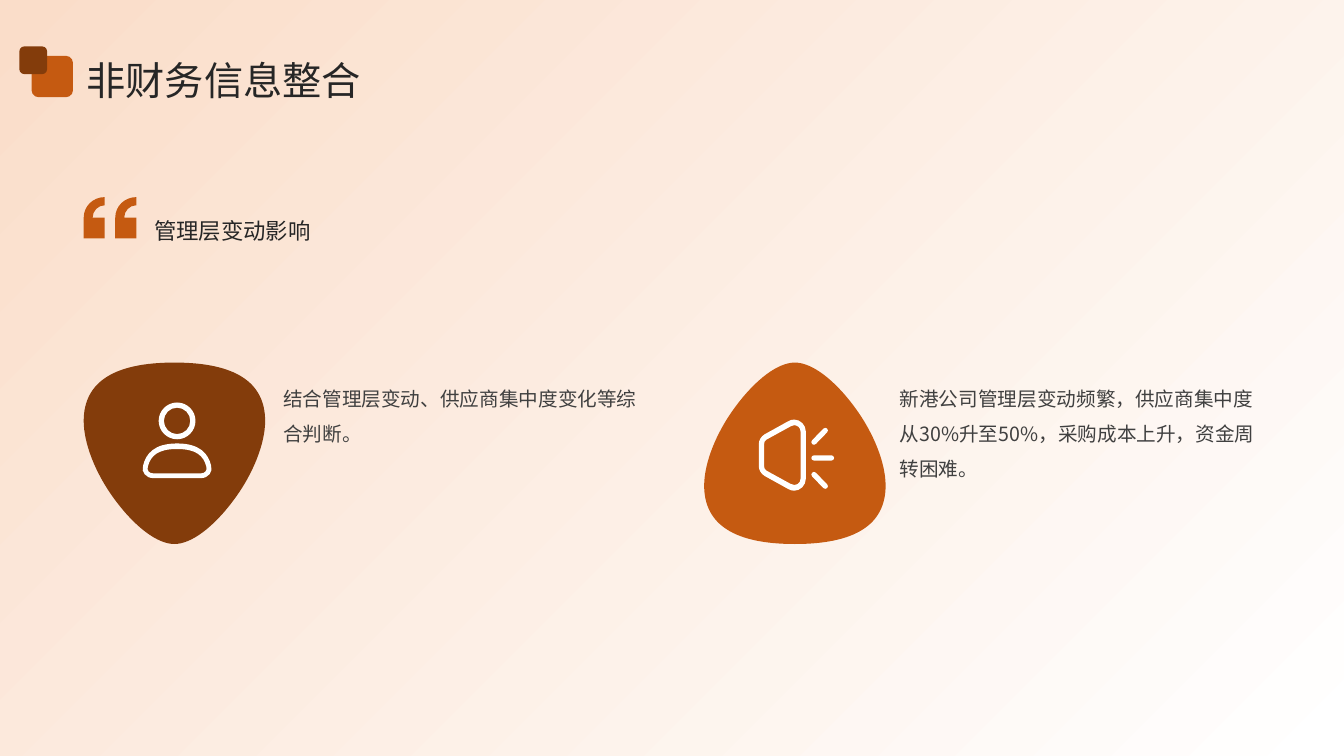
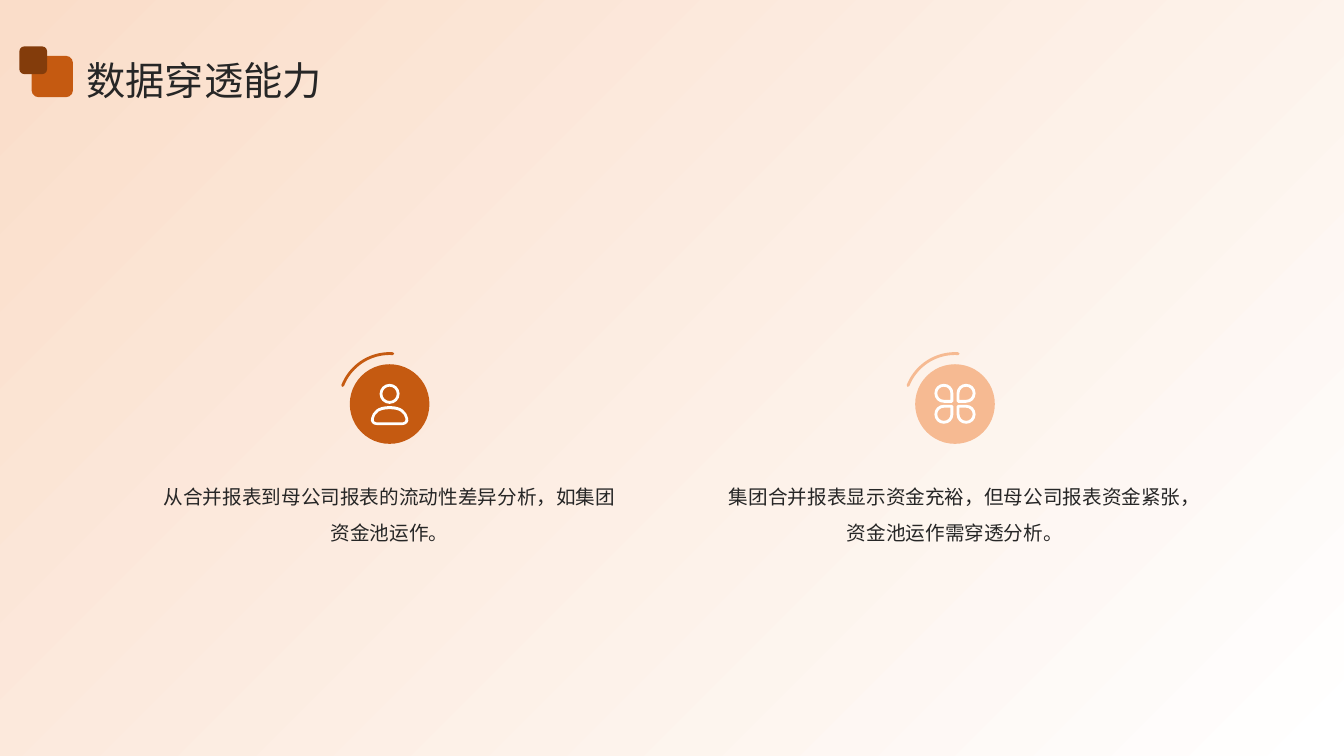
from dataclasses import dataclass
from math import hypot

from pptx import Presentation
from pptx.dml.color import RGBColor
from pptx.enum.shapes import MSO_SHAPE
from pptx.enum.text import MSO_ANCHOR, PP_ALIGN
from pptx.oxml.ns import qn
from pptx.util import Pt


@dataclass(frozen=True)
class Theme:
    font: str = "Noto Sans CJK SC"
    white: str = "FFFFFF"
    peach: str = "FADDC9"
    apricot: str = "F6BA92"
    orange: str = "C55A11"
    brown: str = "833C0B"
    ink: str = "262626"
    grey: str = "404040"
    title: int = 28
    subtitle: int = 16
    body: int = 14


T = Theme()
W, H = 960, 540


def circle(cx, cy, r):
    k = 0.55 * r
    return [(cx, cy - r), (cx + k, cy - r, cx + r, cy - k, cx + r, cy),
            (cx + r, cy + k, cx + k, cy + r, cx, cy + r),
            (cx - k, cy + r, cx - r, cy + k, cx - r, cy),
            (cx - r, cy - k, cx - k, cy - r, cx, cy - r)]


def capsule(x1, y1, x2, y2, r=3.5):
    """Outline of a round-ended bar between two points."""
    length = hypot(x2 - x1, y2 - y1)
    ux, uy = (x2 - x1) / length * r, (y2 - y1) / length * r

    def at(x, y, along, across):
        return x + along * ux - across * uy, y + along * uy + across * ux

    def cap(x, y, d):
        k = 0.55
        return [at(x, y, k * d, -d) + at(x, y, d, -k * d) + at(x, y, d, 0),
                at(x, y, d, k * d) + at(x, y, k * d, d) + at(x, y, 0, d)]

    return [at(x1, y1, 0, -1), at(x2, y2, 0, -1), *cap(x2, y2, 1),
            at(x1, y1, 0, 1), *cap(x1, y1, -1)]


def mirror(contour, width=None, height=None):
    """Reflect a contour inside the given width, height or both."""
    sizes = (width, height)
    return [tuple(v if sizes[i % 2] is None else sizes[i % 2] - v
                  for i, v in enumerate(seg)) for seg in contour]


# A contour is a start point, then line ends (x, y) or curves (x1, y1, x2, y2, x, y).
# An outline is a list of contours, 100 units wide.
BLOB = [[(50, 0), (16.7, 0, 0, 10.7, 0, 32.2), (0, 44.4, 6.4, 61.1, 17.2, 75.6),
         (28.3, 90.6, 40.6, 100, 50, 100), (59.4, 100, 71.7, 90.6, 82.8, 75.6),
         (93.6, 61.1, 100, 44.4, 100, 32.2), (100, 10.7, 83.3, 0, 50, 0)]]
BLOB_TURNED = [mirror(c, 100, 100) for c in BLOB]

QUOTE_MARK = [(40, 0), (40, 15.5), (27, 15.5, 17, 26.5, 17, 39), (40, 39), (40, 78.5),
              (0, 78.5), (0, 39), (0, 17, 18, 0, 40, 0)]
QUOTES = [QUOTE_MARK, [tuple(v + 60 * (i % 2 == 0) for i, v in enumerate(seg))
                       for seg in QUOTE_MARK]]

PERSON = [circle(50, 26.5, 26.5), circle(50, 26.5, 19),
          [(50, 59), (17, 59, 5, 74, 1, 91), (-2, 100, 5, 109, 16, 109), (84, 109),
           (95, 109, 102, 100, 99, 91), (95, 74, 83, 59, 50, 59)],
          [(50, 67), (78, 67, 88, 77, 92, 92), (94, 98, 90, 102, 85, 102), (15, 102),
           (10, 102, 6, 98, 8, 92), (12, 77, 22, 67, 50, 67)]]

MEGAPHONE = [
    [(38.7, 2.5), (41, 1, 44, 0, 47, 0), (55, 0, 62.5, 7, 62.5, 16), (62.5, 78.5),
     (62.5, 87.5, 55, 94.5, 47, 94.5), (44, 94.5, 41, 93.5, 38.7, 92), (8, 75),
     (3, 72, 0, 67, 0, 61.5), (0, 33), (0, 27.5, 3, 22.5, 8, 19.5), (38.7, 2.5)],
    [(47, 7.5), (45, 7.5, 43.5, 8, 42.5, 9), (10.5, 26.5), (8, 28, 7, 30, 7, 33),
     (7, 61.5), (7, 64.5, 8, 66.5, 10.5, 68), (42.5, 85.5),
     (49, 89, 55.5, 85, 55.5, 78.5), (55.5, 16), (55.5, 11, 51.5, 7.5, 47, 7.5)],
    capsule(73.3, 30, 88.3, 14.5), capsule(73.3, 51, 96.5, 51),
    capsule(73.3, 73, 88.3, 88.5)]

PETAL = [[(23, 46), (10, 46, 0, 36, 0, 23), (0, 10, 10, 0, 23, 0),
          (36, 0, 46, 10, 46, 23), (46, 42.5), (46, 44.5, 44.5, 46, 42.5, 46)],
         [(23, 39), (14, 39, 7, 32, 7, 23), (7, 14, 14, 7, 23, 7),
          (32, 7, 39, 14, 39, 23), (39, 39)]]
CLOVER = [mirror(c, w, h) for h in (None, 97) for w in (None, 100) for c in PETAL]


def rgb(color):
    return RGBColor.from_string(color)


def paint(shape, fill=None, line=None, width=0):
    """Give a shape a flat fill, a round-ended line, or neither."""
    shape.shadow.inherit = False
    if fill:
        shape.fill.solid()
        shape.fill.fore_color.rgb = rgb(fill)
    else:
        shape.fill.background()
    if line:
        shape.line.color.rgb = rgb(line)
        shape.line.width = Pt(width)
        shape.line._get_or_add_ln().set("cap", "rnd")
    else:
        shape.line.fill.background()
    return shape


def add_preset(s, kind, x, y, w, h, **style):
    return paint(s.shapes.add_shape(kind, Pt(x), Pt(y), Pt(w), Pt(h)), **style)


def add_outline(s, outline, x, y, w, fill):
    """Draw an outline as one freeform, with its 100 units spanning the width w."""
    def place(seg):
        return [(Pt(x + px * w / 100), Pt(y + py * w / 100))
                for px, py in zip(seg[::2], seg[1::2])]

    builder = s.shapes.build_freeform(*place(outline[0][0])[0])
    for i, (start, *segs) in enumerate(outline):
        if i:
            builder.move_to(*place(start)[0])
        builder.add_line_segments([place(seg)[-1] for seg in segs], close=True)
    shape = builder.convert_to_shape()
    segs = [seg for contour in outline for seg in contour[1:]]
    for line_to, seg in zip(list(shape._element.iter(qn("a:lnTo"))), segs):
        if len(seg) == 6:
            curve = line_to.makeelement(qn("a:cubicBezTo"), {})
            for px, py in place(seg):
                curve.append(curve.makeelement(
                    qn("a:pt"), {"x": str(px - shape.left), "y": str(py - shape.top)}))
            line_to.getparent().replace(line_to, curve)
    return paint(shape, fill=fill)


def add_text(s, text, x, y, w, h, size, color, spacing=1.5,
             align=PP_ALIGN.LEFT, anchor=MSO_ANCHOR.TOP):
    tf = s.shapes.add_textbox(Pt(x), Pt(y), Pt(w), Pt(h)).text_frame
    tf.margin_left = tf.margin_top = tf.margin_right = tf.margin_bottom = 0
    tf.word_wrap = True
    tf.vertical_anchor = anchor
    p = tf.paragraphs[0]
    p.text = text
    p.alignment = align
    p.line_spacing = spacing
    r = p.runs[0]
    r.font.name = T.font
    r.font.size = Pt(size)
    r.font.color.rgb = rgb(color)
    latin = r.font._element.find(qn("a:latin"))
    latin.addnext(latin.makeelement(qn("a:ea"), {"typeface": T.font}))


def new_slide(prs, title):
    """Add a slide with the shared background, title and title mark."""
    s = prs.slides.add_slide(prs.slide_layouts[6])
    backdrop = add_preset(s, MSO_SHAPE.RECTANGLE, 0, 0, W, H)
    backdrop.fill.gradient()
    backdrop.fill.gradient_angle = 135
    for stop, color in zip(backdrop.fill.gradient_stops, (T.white, T.peach)):
        stop.color.rgb = rgb(color)
    add_text(s, title, 61.9, 36.7, 840, 36.7, T.title, T.ink, 1.1, anchor=MSO_ANCHOR.MIDDLE)
    mark = s.shapes.add_group_shape()
    for x, y, side, color in ((22.6, 39.9, 29.5, T.orange), (13.9, 33.2, 19.7, T.brown)):
        add_preset(mark, MSO_SHAPE.ROUNDED_RECTANGLE, x, y, side, side, fill=color)
    return s


def quote_heading(s, text, x, y):
    add_outline(s, QUOTES, x, y, 37.6, T.orange)
    add_text(s, text, x + 50.4, y + 4.5, 787.6, 102, T.subtitle, T.ink)


def blob_item(s, x, y, text, text_x, blob, color, icon, dx, dy, icon_w):
    """Put an icon on a rounded triangle, with its text on the right."""
    add_outline(s, blob, x, y, 129.6, color)
    add_outline(s, icon, x + dx, y + dy, icon_w, T.white)
    add_text(s, text, text_x, y + 8.8, 255, 129.6, T.body, T.grey)


def badge_item(s, x, y, w, text, color, icon, icon_w):
    """Centre a round badge with an arc above a text of width w."""
    cx, disc, ring = x + w / 2, 56.9, 72
    badge = s.shapes.add_group_shape()
    add_preset(badge, MSO_SHAPE.OVAL, cx - disc / 2, y + (ring - disc) / 2, disc, disc,
               fill=color)
    add_outline(badge, icon, cx - icon_w / 2, y + 21.6, icon_w, T.white)
    arc = add_preset(badge, MSO_SHAPE.ARC, cx - ring / 2, y, ring, ring, line=color, width=2)
    arc.adjustments[0], arc.adjustments[1] = 120.86, 164.24
    add_text(s, text, x, y + 85.6, w, 122.4, T.body, T.ink, align=PP_ALIGN.CENTER)


def management_slide(prs):
    s = new_slide(prs, "非财务信息整合")
    quote_heading(s, "管理层变动影响", 59.8, 140.8)
    blob_item(s, 59.8, 259, "结合管理层变动、供应商集中度变化等综合判断。", 202.3,
              BLOB, T.brown, PERSON, 41.9, 28.5, 49.6)
    blob_item(s, 503, 259, "新港公司管理层变动频繁，供应商集中度从30%升至50%，采购成本上升，资金周转困难。",
              642.7, BLOB_TURNED, T.orange, MEGAPHONE, 39, 40.7, 53.8)


def penetration_slide(prs):
    s = new_slide(prs, "数据穿透能力")
    badge_item(s, 113, 252.6, 330.6, "从合并报表到母公司报表的流动性差异分析，如集团资金池运作。",
               T.orange, PERSON, 27)
    badge_item(s, 515.9, 252.6, 332.5, "集团合并报表显示资金充裕，但母公司报表资金紧张，资金池运作需穿透分析。",
               T.apricot, CLOVER, 29.4)


def main():
    prs = Presentation()
    prs.slide_width, prs.slide_height = Pt(W), Pt(H)
    management_slide(prs)
    penetration_slide(prs)
    prs.save("out.pptx")


if __name__ == "__main__":
    main()
